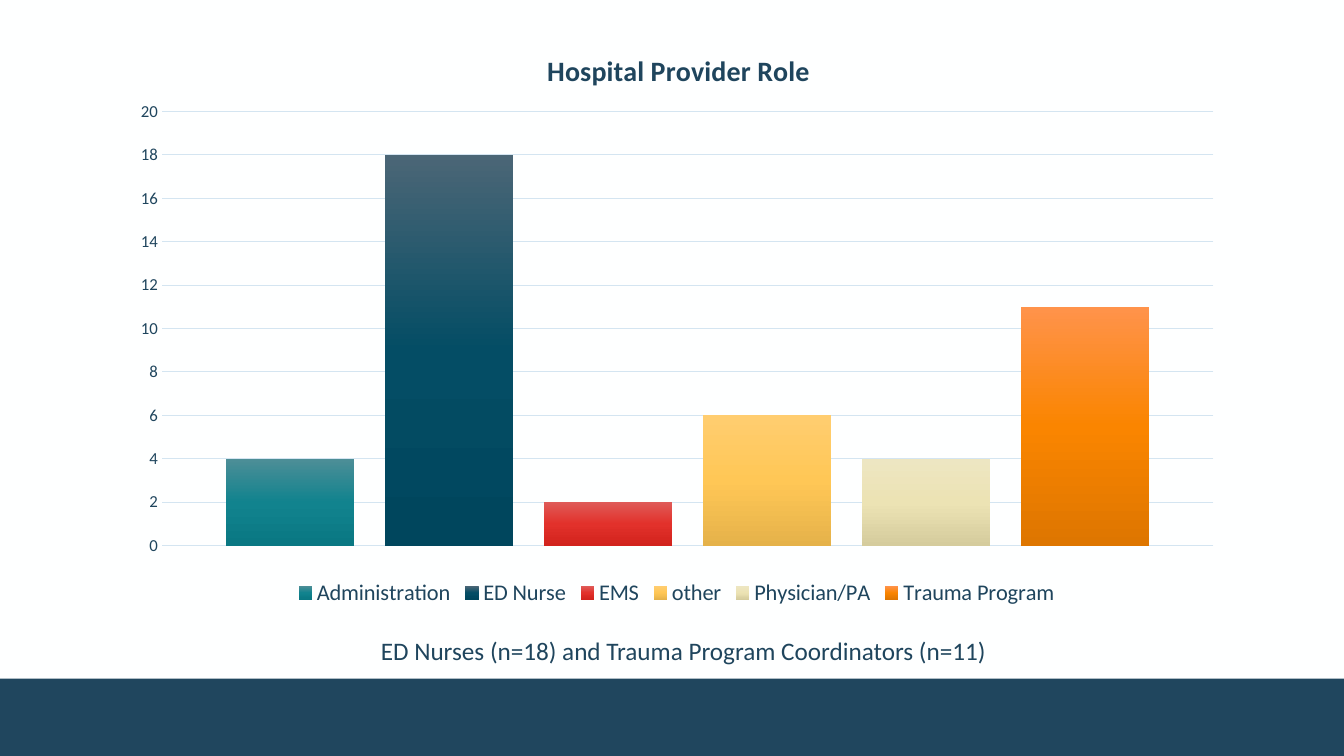
from copy import deepcopy
from dataclasses import dataclass

import pptx
import pptx.chart.data
import pptx.dml.color
import pptx.enum.chart
import pptx.enum.shapes
import pptx.enum.text
import pptx.oxml
import pptx.oxml.ns
import pptx.util
from pptx.util import Cm

qn = pptx.oxml.ns.qn


@dataclass(frozen=True)
class Theme:
    font: str = "Calibri"
    ink: str = "1F455D"
    back: str = "FEFFFF"
    band: str = "20465E"
    grid: str = "D4E5F1"
    title: int = 20
    body: int = 18
    legend: int = 16
    axis: int = 12
    base: int = 10


@dataclass(frozen=True)
class Role:
    name: str
    count: int
    shades: tuple[str, str, str]  # top, middle, bottom


@dataclass(frozen=True)
class Box:
    left: float
    top: float
    width: float
    height: float

    def place(self) -> tuple:
        return Cm(self.left), Cm(self.top), Cm(self.width), Cm(self.height)


THEME = Theme()
WIDE, HIGH = 33.87, 19.05
BAND = Box(0, 17.1, WIDE, HIGH - 17.1)
CHART = Box(2.95, 0.41, 28.19, 14.99)
NOTE = Box(6.05, 15.88, 22.35, 1.02)
ROLES = [
    Role("Administration", 4, ("4D8E97", "11838E", "0A7883")),
    Role("ED Nurse", 18, ("4B6676", "044D65", "00465D")),
    Role("EMS", 2, ("DF5B58", "E2312B", "D2231D")),
    Role("other", 6, ("FFCD70", "FFC756", "E5B24A")),
    Role("Physician/PA", 4, ("EDE6C2", "ECE3B4", "D5CC9D")),
    Role("Trauma Program", 11, ("FF934B", "FA8500", "DE7600")),
]


def rgb(code: str) -> pptx.dml.color.RGBColor:
    return pptx.dml.color.RGBColor.from_string(code)


def style(font, size: int, bold: bool = False) -> None:
    font.name = THEME.font
    font.size = pptx.util.Pt(size)
    font.bold = bold
    font.color.rgb = rgb(THEME.ink)


def write(frame, text: str, *, size: int, bold: bool = False) -> None:
    para = frame.paragraphs[0]
    para.alignment = pptx.enum.text.PP_ALIGN.CENTER
    run = para.add_run()
    run.text = text
    style(run.font, size, bold)


def shade(series, codes: tuple[str, str, str]) -> None:
    """Fill a series with an even gradient from top to bottom."""
    fill = series.format.fill
    fill.gradient()
    fill.gradient_angle = 270
    stops = next(series._element.iter(qn("a:gsLst")))
    stops.append(deepcopy(stops[0]))
    for step, (stop, code) in enumerate(zip(fill.gradient_stops, codes)):
        stop.position = step / 2
        stop.color.rgb = rgb(code)


def arrange(part, index: int, **spots: str | float) -> None:
    """Give a chart part a manual layout in fractions of the chart."""
    old = part.find(qn("c:layout"))
    if old is not None:
        part.remove(old)
    marks = "".join(f'<c:{key} val="{val}"/>' for key, val in spots.items())
    part.insert(index, pptx.oxml.parse_xml(
        f'<c:layout {pptx.oxml.ns.nsdecls("c")}>'
        f"<c:manualLayout>{marks}</c:manualLayout></c:layout>"))


def add_band(slide) -> None:
    band = slide.shapes.add_shape(
        pptx.enum.shapes.MSO_SHAPE.RECTANGLE, *BAND.place())
    band.shadow.inherit = False
    band.fill.solid()
    band.fill.fore_color.rgb = rgb(THEME.band)
    band.line.fill.background()


def add_roles(slide) -> None:
    kinds = pptx.enum.chart
    data = pptx.chart.data.CategoryChartData()
    data.categories = ["1"]
    for role in ROLES:
        data.add_series(role.name, [role.count])
    chart = slide.shapes.add_chart(
        kinds.XL_CHART_TYPE.COLUMN_CLUSTERED, *CHART.place(), data).chart
    style(chart.font, THEME.base)

    chart.has_title = True
    write(chart.chart_title.text_frame, "Hospital Provider Role",
          size=THEME.title, bold=True)
    arrange(chart.chart_title._element, 1,
            xMode="edge", yMode="edge", x=0.38, y=0.05)

    plot = chart.plots[0]
    plot.gap_width = 100
    plot.overlap = -24
    plot.vary_by_categories = False
    for series, role in zip(plot.series, ROLES):
        series.invert_if_negative = False
        shade(series, role.shades)
    arrange(plot._element.getparent(), 0, layoutTarget="inner",
            xMode="edge", yMode="edge", x=0.04, y=0.16, w=0.94, h=0.73)

    chart.category_axis.visible = False
    axis = chart.value_axis
    axis.minimum_scale, axis.maximum_scale, axis.major_unit = 0, 20, 2
    axis.major_tick_mark = kinds.XL_TICK_MARK.NONE
    axis.minor_tick_mark = kinds.XL_TICK_MARK.NONE
    axis.format.line.fill.background()
    style(axis.tick_labels.font, THEME.axis)
    grid = axis.major_gridlines.format.line
    grid.color.rgb = rgb(THEME.grid)
    grid.width = pptx.util.Pt(0.75)

    chart.has_legend = True
    chart.legend.position = kinds.XL_LEGEND_POSITION.BOTTOM
    chart.legend.include_in_layout = False
    style(chart.legend.font, THEME.legend)


def add_note(slide) -> None:
    frame = slide.shapes.add_textbox(*NOTE.place()).text_frame
    frame.word_wrap = True
    frame.auto_size = pptx.enum.text.MSO_AUTO_SIZE.SHAPE_TO_FIT_TEXT
    write(frame, "ED Nurses (n=18) and Trauma Program Coordinators (n=11)",
          size=THEME.body)


def main() -> None:
    deck = pptx.Presentation()
    deck.slide_width, deck.slide_height = Cm(WIDE), Cm(HIGH)
    slide = deck.slides.add_slide(deck.slide_layouts[6])
    slide.background.fill.solid()
    slide.background.fill.fore_color.rgb = rgb(THEME.back)
    add_band(slide)
    add_roles(slide)
    add_note(slide)
    deck.save("out.pptx")


if __name__ == "__main__":
    main()
